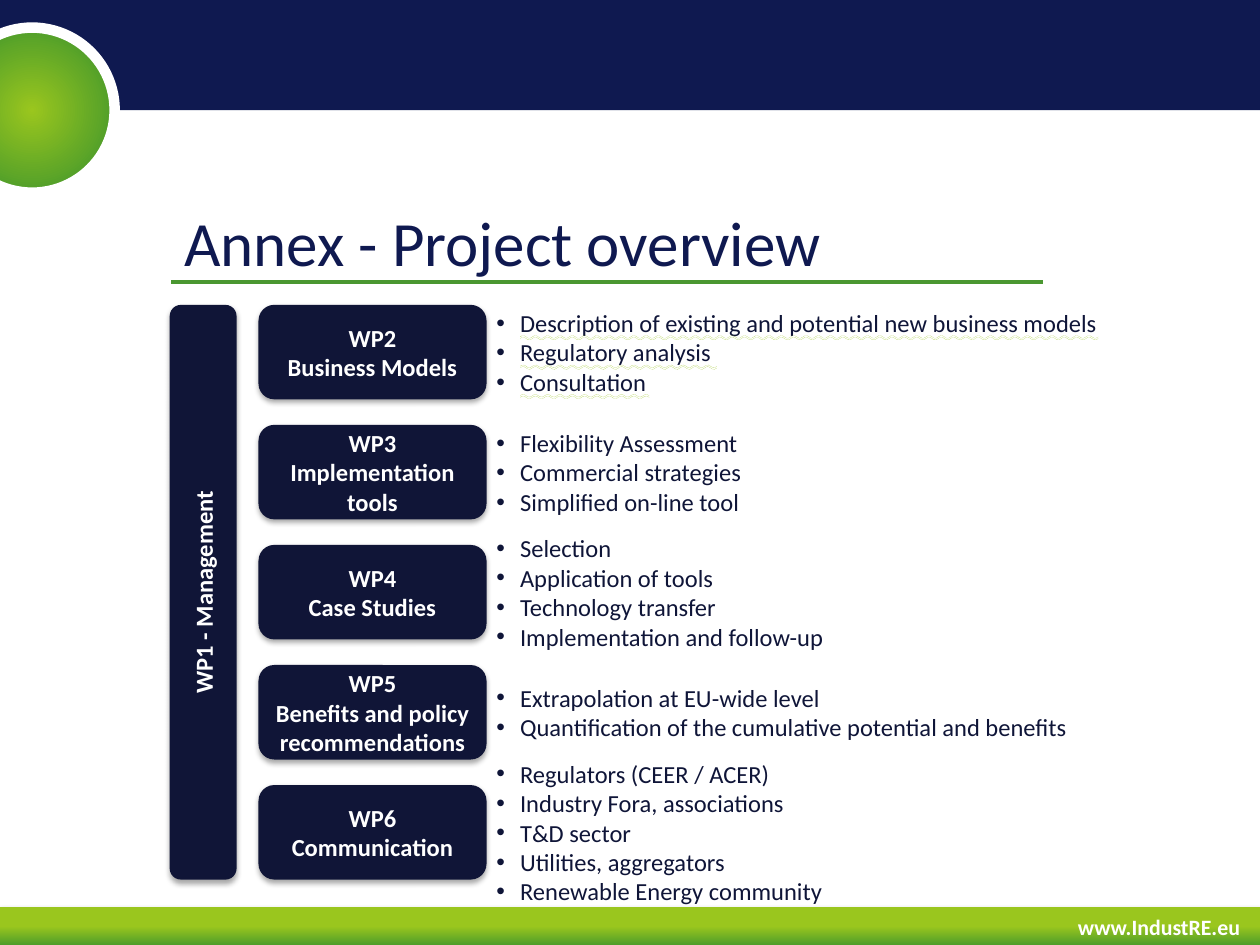
import pptx
import pptx.util
import pptx.dml.color
import pptx.enum.shapes
import pptx.enum.text
import pptx.oxml
import pptx.oxml.ns

Pt = pptx.util.Pt
Kind = pptx.enum.shapes.MSO_SHAPE
Align = pptx.enum.text.PP_ALIGN
Anchor = pptx.enum.text.MSO_ANCHOR
NS = pptx.oxml.ns.nsdecls("a")
HUES = {"navy": "0F1950", "box": "101537", "ink": "0F1538", "lime": "9AC61E",
        "green": "4F9E2A", "rule": "4A9731", "white": "FFFFFF", "black": "000000"}
PACKS = [
    ("WP2\nBusiness Models",
     ["Description of existing and potential new business models",
      "Regulatory analysis", "Consultation"], True),
    ("WP3\nImplementation tools",
     ["Flexibility Assessment", "Commercial strategies", "Simplified on-line tool"], False),
    ("WP4\nCase Studies",
     ["Selection", "Application of tools", "Technology transfer",
      "Implementation and follow-up"], False),
    ("WP5\nBenefits and policy recommendations",
     ["Extrapolation at EU-wide level",
      "Quantification of the cumulative potential and benefits"], False),
    ("WP6\nCommunication",
     ["Regulators (CEER / ACER)", "Industry Fora, associations", "T&D sector",
      "Utilities, aggregators", "Renewable Energy community"], False),
]


def hue(name):
    """Return a named colour."""
    return pptx.dml.color.RGBColor.from_string(HUES[name])


def node(xml):
    """Parse an XML snippet."""
    return pptx.oxml.parse_xml(xml)


def style(frame, size, color, bold=False, align=Align.LEFT):
    """Format every paragraph and run of a text frame."""
    for para in frame.paragraphs:
        para.alignment = align
        for run in para.runs:
            font = run.font
            font.name, font.size, font.bold = "Calibri", Pt(size), bold
            font.color.rgb = hue(color)


def snug(frame):
    """Remove the insets and centre the text vertically."""
    frame.word_wrap = True
    frame.vertical_anchor = Anchor.MIDDLE
    frame.margin_left = frame.margin_right = frame.margin_top = frame.margin_bottom = 0


def shape(slide, kind, box, fill=None):
    """Add a shape without line or shadow."""
    item = slide.shapes.add_shape(kind, *map(Pt, box))
    item.shadow.inherit = False
    item.line.fill.background()
    if fill:
        item.fill.solid()
        item.fill.fore_color.rgb = hue(fill)
    return item


def blend(item, start, end):
    """Fill a shape from lime to green between two positions."""
    item.fill.gradient()
    item.fill.gradient_angle = 270
    for stop, spot, name in zip(item.fill.gradient_stops, (start, end), ("lime", "green")):
        stop.position = spot
        stop.color.rgb = hue(name)


def shade(item):
    """Add a soft shadow below a shape."""
    item.element.spPr.find(pptx.oxml.ns.qn("a:effectLst")).append(node(
        f'<a:outerShdw {NS} blurRad="{Pt(3.1)}" dist="{Pt(1.8)}" dir="5400000" rotWithShape="0">'
        f'<a:srgbClr val="{HUES["black"]}"><a:alpha val="35000"/></a:srgbClr></a:outerShdw>'))


def header(slide, box):
    """Draw the top band and the round emblem."""
    left, top, wide, high = box
    shape(slide, Kind.RECTANGLE, box, "navy")
    disc = shape(slide, Kind.OVAL, (left - 28.8, top + 15.8, 94.3, 94.3))
    blend(disc, 0, 0.72)
    line = disc.element.spPr.find(".//" + pptx.oxml.ns.qn("a:lin"))
    line.addprevious(node(f'<a:path {NS} path="circle">'
                          '<a:fillToRect l="50000" t="50000" r="50000" b="50000"/></a:path>'))
    line.getparent().remove(line)
    disc.line.color.rgb = hue("white")
    disc.line.width = Pt(6)


def footer(slide, box):
    """Draw the bottom band with the web address."""
    left, top, wide, high = box
    band = shape(slide, Kind.RECTANGLE, box)
    blend(band, 0.5, 1)
    shade(band)
    frame = slide.shapes.add_textbox(*map(Pt, (left + 581, top, 162.7, high))).text_frame
    frame.word_wrap = True
    frame.text = "www.IndustRE.eu"
    style(frame, 12.5, "white", True, Align.CENTER)


def heading(slide, box):
    """Place the title and the rule under it."""
    left, top, wide, high = box
    title = slide.shapes.title
    title.left, title.top, title.width, title.height = map(Pt, box)
    frame = title.text_frame
    frame.text = "Annex - Project overview"
    frame.auto_size = pptx.enum.text.MSO_AUTO_SIZE.NONE
    frame.vertical_anchor = Anchor.MIDDLE
    style(frame, 36, "navy")
    base = top + high + 2.2
    rule = slide.shapes.add_connector(pptx.enum.shapes.MSO_CONNECTOR.STRAIGHT,
                                      Pt(left), Pt(base), Pt(left + wide), Pt(base))
    rule.line.color.rgb = hue("rule")
    rule.line.width = Pt(2)
    rule.element.spPr.append(node(f"<a:effectLst {NS}/>"))


def label(slide, box, text):
    """Draw a rounded box with a bold label."""
    item = shape(slide, Kind.ROUNDED_RECTANGLE, box, "box")
    shade(item)
    snug(item.text_frame)
    item.text_frame.text = text
    style(item.text_frame, 14, "white", True, Align.CENTER)
    return item


def wave(run):
    """Underline a run with a pale double wave."""
    run.font.underline = pptx.enum.text.MSO_UNDERLINE.WAVY_DOUBLE_LINE
    props = run.font._element
    props.find(pptx.oxml.ns.qn("a:latin")).addprevious(node(
        f'<a:uFill {NS}><a:solidFill><a:srgbClr val="{HUES["lime"]}">'
        '<a:alpha val="50000"/></a:srgbClr></a:solidFill></a:uFill>'))


def tasks(slide, box, lines, waved):
    """Place a bullet list centred on its box."""
    frame = slide.shapes.add_textbox(*map(Pt, box)).text_frame
    snug(frame)
    frame.text = "\n".join(lines)
    for para in frame.paragraphs:
        props = para._p.get_or_add_pPr()
        props.set("marL", str(Pt(13.5)))
        props.set("indent", str(-Pt(13.5)))
        props.append(node(f'<a:buFont {NS} typeface="Arial"/>'))
        props.append(node(f'<a:buChar {NS} char="•"/>'))
    style(frame, 14, "ink")
    if waved:
        for para in frame.paragraphs:
            wave(para.runs[0])


def plan(slide, box):
    """Draw the management bar and one row for each work package."""
    left, top, wide, high = box
    bar, tall, slim = 38.2, 54, 21.6
    step = (high - tall) / (len(PACKS) - 1)
    side = label(slide, (left + (bar - high) / 2, top + (high - bar) / 2, high, bar),
                 "WP1 - Management")
    side.rotation = 270
    for row, (name, lines, waved) in enumerate(PACKS):
        y = top + row * step
        label(slide, (left + 50.7, y, 130.3, tall), name)
        tasks(slide, (left + 186.7, y + (tall - slim) / 2, wide - 186.7, slim), lines, waved)


def main():
    """Build and save the slide."""
    deck = pptx.Presentation()
    deck.slide_width, deck.slide_height = Pt(720), Pt(540)
    slide = deck.slides.add_slide(deck.slide_layouts[5])
    footer(slide, (0, 518.4, 720, 21.6))
    header(slide, (0, 0, 720, 63))
    heading(slide, (98, 116.6, 498, 42.5))
    plan(slide, (97, 174.2, 583.4, 328.4))
    deck.save("out.pptx")


if __name__ == "__main__":
    main()
